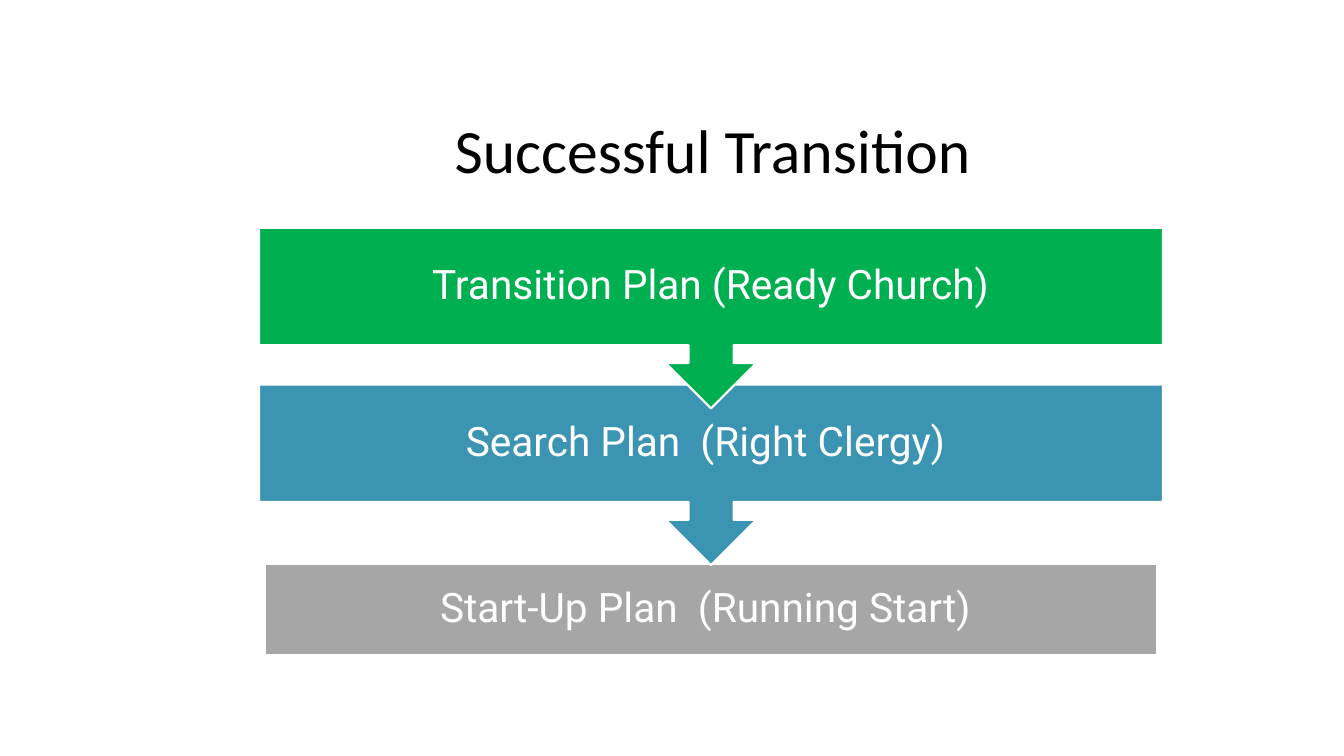
"""Build the slide of three plans that lead to a successful transition."""
from dataclasses import dataclass

from pptx import Presentation
from pptx.dml.color import RGBColor
from pptx.enum.shapes import MSO_SHAPE
from pptx.enum.text import MSO_ANCHOR, PP_ALIGN
from pptx.util import Cm, Pt

RECT = MSO_SHAPE.RECTANGLE
CALLOUT = MSO_SHAPE.DOWN_ARROW_CALLOUT
MIDDLE = MSO_ANCHOR.MIDDLE
CENTER = PP_ALIGN.CENTER

COLORS = {
    "black": "000000",
    "white": "FFFFFF",
    "green": "00B050",
    "blue": "3B94B1",
    "gray": "A6A6A6",
}
MID = 17.92
INSET = 0.58


@dataclass
class Plan:
    """A bar of the flow, in centimetres, centred on MID."""
    text: str
    color: str
    kind: int
    top: float
    width: float
    height: float
    shift: float = 0


PLANS = [
    Plan("Start-Up Plan  (Running Start)", "gray", RECT, 14.2, 22.5, 2.31, 0.26),
    Plan("Search Plan  (Right Clergy)", "blue", CALLOUT, 9.69, 22.78, 4.55, 0.26),
    Plan("Transition Plan (Ready Church)", "green", CALLOUT, 5.74, 22.78, 4.55),
]


def tint(name: str) -> RGBColor:
    """Return the named colour."""
    return RGBColor.from_string(COLORS[name])


def write(shape, text: str, font: str, size: int, color: str) -> None:
    """Put one centred line of text in a shape."""
    frame = shape.text_frame
    frame.word_wrap = True
    frame.vertical_anchor = MIDDLE
    frame.text = text
    line = frame.paragraphs[0]
    line.alignment = CENTER
    line.line_spacing = 0.9
    line.font.name = font
    line.font.size = Pt(size)
    line.font.color.rgb = tint(color)


def draw_title(slide) -> None:
    """Place and fill the title."""
    title = slide.shapes.title
    title.left, title.top = Cm(7.52), Cm(2.79)
    title.width, title.height = Cm(19.84), Cm(2.18)
    write(title, "Successful Transition", "Calibri", 44, "black")
    title.text_frame.margin_left = Cm(1.3)


def draw_plan(slide, plan: Plan) -> None:
    """Draw one plan with its label."""
    left = MID - plan.width / 2
    bar = slide.shapes.add_shape(
        plan.kind, Cm(left), Cm(plan.top), Cm(plan.width), Cm(plan.height))
    bar.shadow.inherit = False
    bar.fill.solid()
    bar.fill.fore_color.rgb = tint(plan.color)
    bar.line.color.rgb = tint("white")
    bar.line.width = Pt(1.5)
    write(bar, plan.text, "Roboto", 29, "white")
    frame = bar.text_frame
    frame.margin_left = frame.margin_top = frame.margin_bottom = Cm(INSET)
    frame.margin_right = Cm(INSET + plan.shift)


def main() -> None:
    """Build and save the deck."""
    deck = Presentation()
    deck.slide_width, deck.slide_height = Cm(33.87), Cm(19.05)
    slide = deck.slides.add_slide(deck.slide_layouts[5])
    draw_title(slide)
    for plan in PLANS:
        draw_plan(slide, plan)
    deck.save("out.pptx")


if __name__ == "__main__":
    main()
